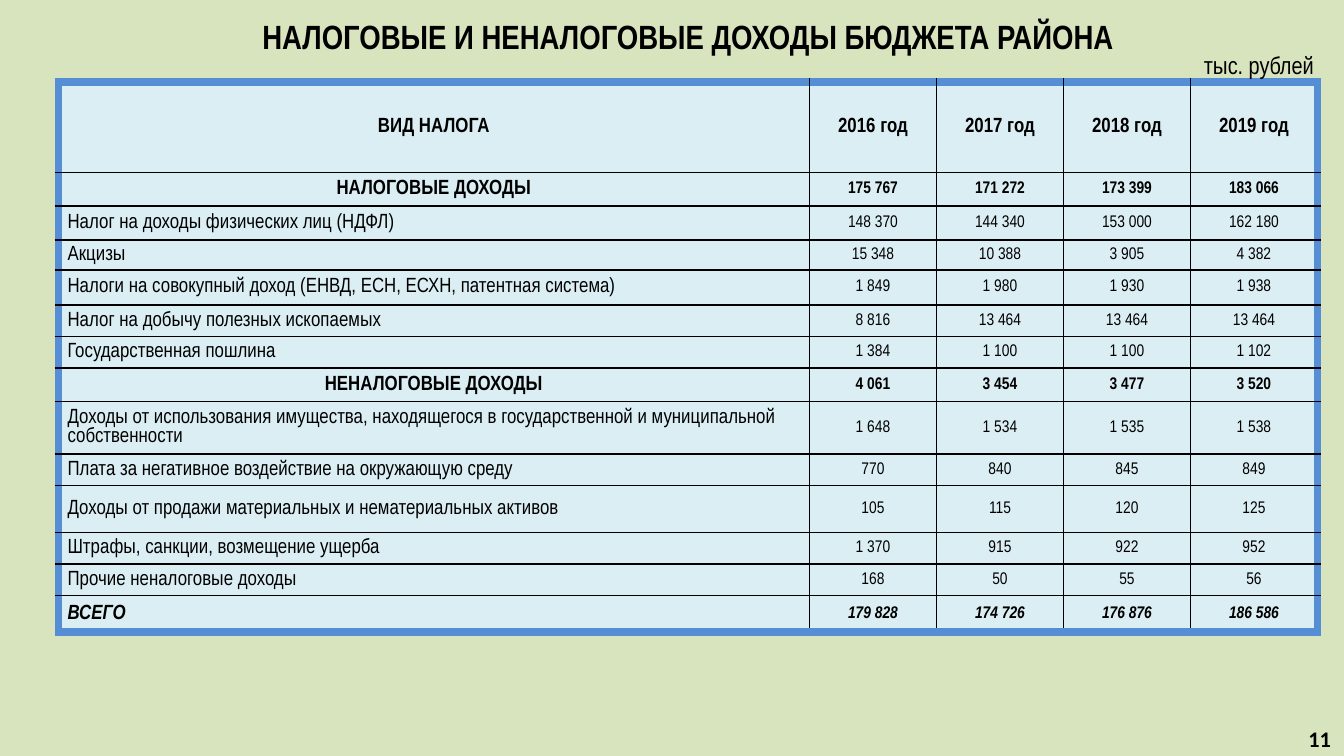
from dataclasses import dataclass

from lxml import etree
from pptx import Presentation
from pptx import util as u
from pptx.dml.color import RGBColor
from pptx.enum import text
from pptx.oxml import ns


@dataclass(frozen=True)
class Theme:
    background: str = "D7E4BD"
    cell: str = "DBEEF4"
    frame: str = "558ED5"
    ink: str = "000000"
    font: str = "Arial Narrow"
    number_font: str = "Calibri"
    title_size: float = 18
    unit_size: float = 13
    label_size: float = 11
    figure_size: float = 9
    page_size: float = 11.9
    frame_width: float = 4.5
    rule_width: float = 1


THEME = Theme()
GRID = u.Inches(0.1)
PAGE_COLUMNS, PAGE_ROWS = 100, 56.25
LABEL_COLUMNS, FIGURE_COLUMNS = 55.9, 9.45
CENTER, LEFT = text.PP_ALIGN.CENTER, text.PP_ALIGN.LEFT

YEARS = [2016, 2017, 2018, 2019]
INCOME = [
    ("group", 2.5, "НАЛОГОВЫЕ ДОХОДЫ", [175767, 171272, 173399, 183066]),
    ("item", 2.5, "Налог на доходы физических лиц (НДФЛ)", [148370, 144340, 153000, 162180]),
    ("item", 2.25, "Акцизы", [15348, 10388, 3905, 4382]),
    ("item", 2.6, "Налоги на совокупный доход (ЕНВД, ЕСН, ЕСХН, патентная система)",
     [1849, 1980, 1930, 1938]),
    ("item", 2.35, "Налог на добычу полезных ископаемых", [8816, 13464, 13464, 13464]),
    ("item", 2.35, "Государственная пошлина", [1384, 1100, 1100, 1102]),
    ("group", 2.5, "НЕНАЛОГОВЫЕ ДОХОДЫ", [4061, 3454, 3477, 3520]),
    ("item", 3.9, "Доходы от использования имущества, находящегося в государственной "
     "и муниципальной собственности", [1648, 1534, 1535, 1538]),
    ("item", 2.35, "Плата за негативное воздействие на окружающую среду", [770, 840, 845, 849]),
    ("item", 3.5, "Доходы от продажи материальных и нематериальных активов",
     [105, 115, 120, 125]),
    ("item", 2.35, "Штрафы, санкции, возмещение ущерба", [1370, 915, 922, 952]),
    ("item", 2.35, "Прочие неналоговые доходы", [168, 50, 55, 56]),
    ("total", 2.7, "ВСЕГО", [179828, 174726, 176876, 186586]),
]


def cells(count):
    return round(count * GRID)


def area(*counts):
    return [cells(count) for count in counts]


def write(para, words, size, align, font=THEME.font, bold=False, italic=False):
    para.add_run().text = words
    para.alignment = align
    para.font.name = font
    para.font.size = u.Pt(size)
    para.font.bold = bold
    para.font.italic = italic
    para.font.color.rgb = RGBColor.from_string(THEME.ink)


def add_title(page, words):
    box = page.shapes.title
    box.left, box.top, box.width, box.height = area(8.3, 0.9, 85.8, 3.6)
    frame = box.text_frame
    frame.auto_size = text.MSO_AUTO_SIZE.NONE
    frame.vertical_anchor = text.MSO_ANCHOR.MIDDLE
    write(frame.paragraphs[0], words, THEME.title_size, CENTER, bold=True)


def add_note(page, place, words, size, align, anchor, **style):
    frame = page.shapes.add_textbox(*area(*place)).text_frame
    frame.word_wrap = True
    frame.vertical_anchor = anchor
    write(frame.paragraphs[0], words, size, align, **style)


def draw_border(cell, index, side, color, width):
    line = etree.Element(ns.qn(f"a:ln{side}"), w=str(u.Pt(width)))
    fill = etree.SubElement(line, ns.qn("a:solidFill"))
    etree.SubElement(fill, ns.qn("a:srgbClr"), val=color)
    cell._tc.get_or_add_tcPr().insert(index, line)


def format_cell(cell, outer_sides, padding):
    cell.fill.solid()
    cell.fill.fore_color.rgb = RGBColor.from_string(THEME.cell)
    cell.vertical_anchor = text.MSO_ANCHOR.MIDDLE
    cell.margin_left = cell.margin_right = u.Inches(0.07)
    cell.margin_top = cell.margin_bottom = u.Inches(padding)
    for index, side in enumerate("LRTB"):
        if side in outer_sides:
            draw_border(cell, index, side, THEME.frame, THEME.frame_width)
        else:
            draw_border(cell, index, side, THEME.ink, THEME.rule_width)


def fill_row(table, row, kind, words):
    last_row, last_column = len(table.rows) - 1, len(table.columns) - 1
    for column, content in enumerate(words):
        cell = table.cell(row, column)
        edges = {"L": column == 0, "R": column == last_column,
                 "T": row == 0, "B": row == last_row}
        format_cell(cell, [side for side in edges if edges[side]],
                    0 if kind == "item" else 0.04)
        is_label = column == 0 or kind == "header"
        size = THEME.label_size if is_label else THEME.figure_size
        align = LEFT if column == 0 and kind in ("item", "total") else CENTER
        write(cell.text_frame.paragraphs[0], content, size, align,
              bold=kind != "item", italic=kind == "total")


def add_income_table(page):
    rows = [("header", 6.75, ["ВИД НАЛОГА"] + [f"{year} год" for year in YEARS])]
    for kind, height, label, figures in INCOME:
        rows.append((kind, height,
                     [label] + [f"{figure:,}".replace(",", " ") for figure in figures]))
    widths = [LABEL_COLUMNS] + [FIGURE_COLUMNS] * len(YEARS)
    heights = [height for _, height, _ in rows]
    place = area(4.33, 6.1, sum(widths), sum(heights))
    table = page.shapes.add_table(len(rows), len(widths), *place).table
    table.first_row = table.horz_banding = False
    for column, width in zip(table.columns, widths):
        column.width = cells(width)
    for index, (kind, height, words) in enumerate(rows):
        table.rows[index].height = cells(height)
        fill_row(table, index, kind, words)


def main():
    deck = Presentation()
    deck.slide_width, deck.slide_height = area(PAGE_COLUMNS, PAGE_ROWS)
    page = deck.slides.add_slide(deck.slide_layouts.get_by_name("Title Only"))
    page.background.fill.solid()
    page.background.fill.fore_color.rgb = RGBColor.from_string(THEME.background)
    add_income_table(page)
    add_note(page, (88.6, 3.2, 11.4, 3.2), "тыс. рублей", THEME.unit_size,
             text.PP_ALIGN.JUSTIFY, text.MSO_ANCHOR.MIDDLE)
    add_title(page, "НАЛОГОВЫЕ И НЕНАЛОГОВЫЕ ДОХОДЫ БЮДЖЕТА РАЙОНА")
    add_note(page, (93.3, 53.5, 6.7, 2.6), "11", THEME.page_size,
             text.PP_ALIGN.RIGHT, text.MSO_ANCHOR.TOP, font=THEME.number_font, bold=True)
    deck.save("out.pptx")


if __name__ == "__main__":
    main()
